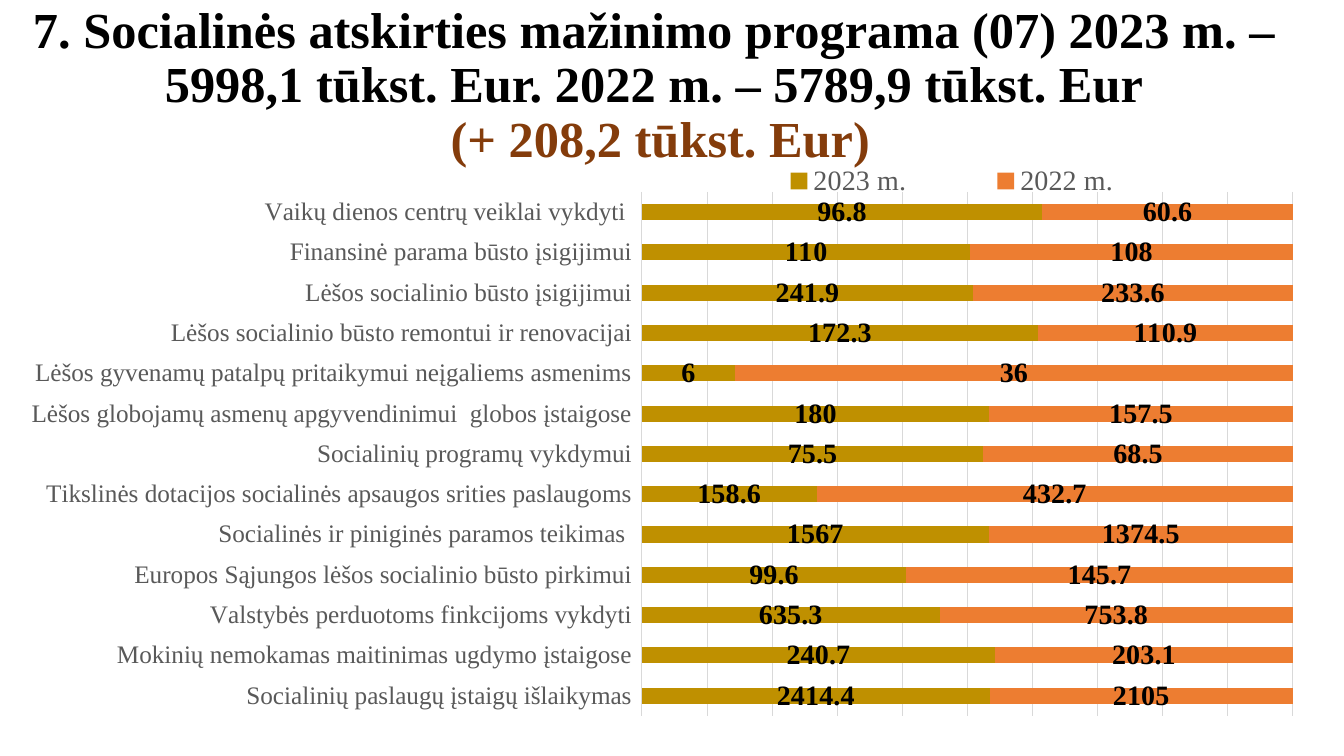
from lxml import etree
from pptx import Presentation
from pptx.chart.data import CategoryChartData
from pptx.dml.color import RGBColor
from pptx.enum.chart import (XL_CHART_TYPE, XL_LABEL_POSITION, XL_LEGEND_POSITION,
                             XL_TICK_LABEL_POSITION, XL_TICK_MARK)
from pptx.enum.text import MSO_ANCHOR, PP_ALIGN
from pptx.oxml.ns import qn
from pptx.util import Emu, Pt

STACKED_100 = XL_CHART_TYPE.BAR_STACKED_100
LABEL_CENTER = XL_LABEL_POSITION.CENTER
LEGEND_TOP = XL_LEGEND_POSITION.TOP
LABELS_LOW = XL_TICK_LABEL_POSITION.LOW
NO_TICK = XL_TICK_MARK.NONE
CENTER = PP_ALIGN.CENTER
MIDDLE = MSO_ANCHOR.MIDDLE

FONT = "Times New Roman"
COLORS = {"text": "000000", "change": "843C0B", "muted": "595959", "grid": "D9D9D9",
          "2023 m.": "BF9000", "2022 m.": "ED7D31"}

TITLE = ("7. Socialinės atskirties mažinimo programa (07) 2023 m. – "
         "5998,1 tūkst. Eur. 2022 m. – 5789,9 tūkst. Eur")
CHANGE = "(+ 208,2 tūkst. Eur)"
YEARS = ("2023 m.", "2022 m.")
SPENDING = [  # bottom bar first
    ("Socialinių paslaugų įstaigų išlaikymas", 2414.4, 2105),
    ("Mokinių nemokamas maitinimas ugdymo įstaigose", 240.7, 203.1),
    ("Valstybės perduotoms finkcijoms vykdyti", 635.3, 753.8),
    ("Europos Sąjungos lėšos socialinio būsto pirkimui", 99.6, 145.7),
    ("Socialinės ir piniginės paramos teikimas ", 1567, 1374.5),
    ("Tikslinės dotacijos socialinės apsaugos srities paslaugoms", 158.6, 432.7),
    ("Socialinių programų vykdymui", 75.5, 68.5),
    ("Lėšos globojamų asmenų apgyvendinimui  globos įstaigose", 180, 157.5),
    ("Lėšos gyvenamų patalpų pritaikymui neįgaliems asmenims", 6, 36),
    ("Lėšos socialinio būsto remontui ir renovacijai", 172.3, 110.9),
    ("Lėšos socialinio būsto įsigijimui", 241.9, 233.6),
    ("Finansinė parama būsto įsigijimui", 110, 108),
    ("Vaikų dienos centrų veiklai vykdyti ", 96.8, 60.6),
]

PX = 9071  # EMU per px
SLIDE = (1344, 756)
TITLE_BOX = (0, 25, 1308, 123)
CHART_BOX = (11, 158, 1297, 573)
PLOT_BOX = (642, 192, 651, 524)
LEGEND_BOX = (709, 164, 486, 34)


def px(*lengths):
    return [Emu(length * PX) for length in lengths]


def rgb(name):
    return RGBColor.from_string(COLORS[name])


def style(font, size, color="text", bold=False):
    font.name, font.size, font.bold = FONT, Pt(size), bold
    font.color.rgb = rgb(color)


def add_text(paragraph, text, **form):
    run = paragraph.add_run()
    run.text = text
    style(run.font, **form)


def style_line(line):
    line.color.rgb = rgb("grid")
    line.width = Pt(0.75)


def place_in_chart(part, box, index, inner=False):
    """Give a chart part a manual layout, as fractions of the chart's frame."""
    for old in part.findall(qn("c:layout")):
        part.remove(old)
    layout = etree.Element(qn("c:layout"))
    manual = etree.SubElement(layout, qn("c:manualLayout"))
    left, top, width, height = CHART_BOX
    settings = [("xMode", "edge"), ("yMode", "edge"),
                ("x", (box[0] - left) / width), ("y", (box[1] - top) / height),
                ("w", box[2] / width), ("h", box[3] / height)]
    if inner:
        settings.insert(0, ("layoutTarget", "inner"))
    for tag, value in settings:
        etree.SubElement(manual, qn(f"c:{tag}")).set("val", str(value))
    part.insert(index, layout)


def add_title(slide):
    title = slide.shapes.title
    title.left, title.top, title.width, title.height = px(*TITLE_BOX)
    title.text_frame.word_wrap = True
    title.text_frame.vertical_anchor = MIDDLE
    heading = title.text_frame.paragraphs[0]
    heading.alignment = CENTER
    heading.line_spacing = 0.9
    add_text(heading, TITLE, size=36, bold=True)
    heading.add_line_break()
    add_text(heading, " " + CHANGE, size=36, bold=True, color="change")


def add_spending_chart(slide):
    names, *amounts = zip(*SPENDING)
    data = CategoryChartData()
    data.categories = names
    for year, values in zip(YEARS, amounts):
        data.add_series(year, values)
    chart = slide.shapes.add_chart(STACKED_100, *px(*CHART_BOX), data).chart
    style(chart.font, 18)
    chart.has_title = False

    plot = chart.plots[0]
    plot.gap_width, plot.overlap, plot.vary_by_categories = 150, 100, False
    for series in plot.series:
        series.format.fill.solid()
        series.format.fill.fore_color.rgb = rgb(series.name)
        labels = series.data_labels
        labels.show_value = True
        labels.position = LABEL_CENTER
        style(labels.font, 20, bold=True)

    categories = chart.category_axis
    categories.major_tick_mark = categories.minor_tick_mark = NO_TICK
    categories.tick_label_position = LABELS_LOW
    style(categories.tick_labels.font, 18, "muted")
    style_line(categories.format.line)

    shares = chart.value_axis
    shares.minimum_scale, shares.maximum_scale, shares.major_unit = 0, 1, 0.1
    shares.has_major_gridlines = True
    style_line(shares.major_gridlines.format.line)
    shares.visible = False

    chart.has_legend = True
    legend = chart.legend
    legend.position = LEGEND_TOP
    legend.include_in_layout = False
    style(legend.font, 20, "muted")

    plot_area = chart.element.find(".//" + qn("c:plotArea"))
    place_in_chart(plot_area, PLOT_BOX, 0, inner=True)
    place_in_chart(chart.element.find(".//" + qn("c:legend")), LEGEND_BOX, 1)


def main():
    deck = Presentation()
    deck.slide_width, deck.slide_height = px(*SLIDE)
    slide = deck.slides.add_slide(deck.slide_layouts[5])
    add_title(slide)
    add_spending_chart(slide)
    deck.save("out.pptx")


if __name__ == "__main__":
    main()
